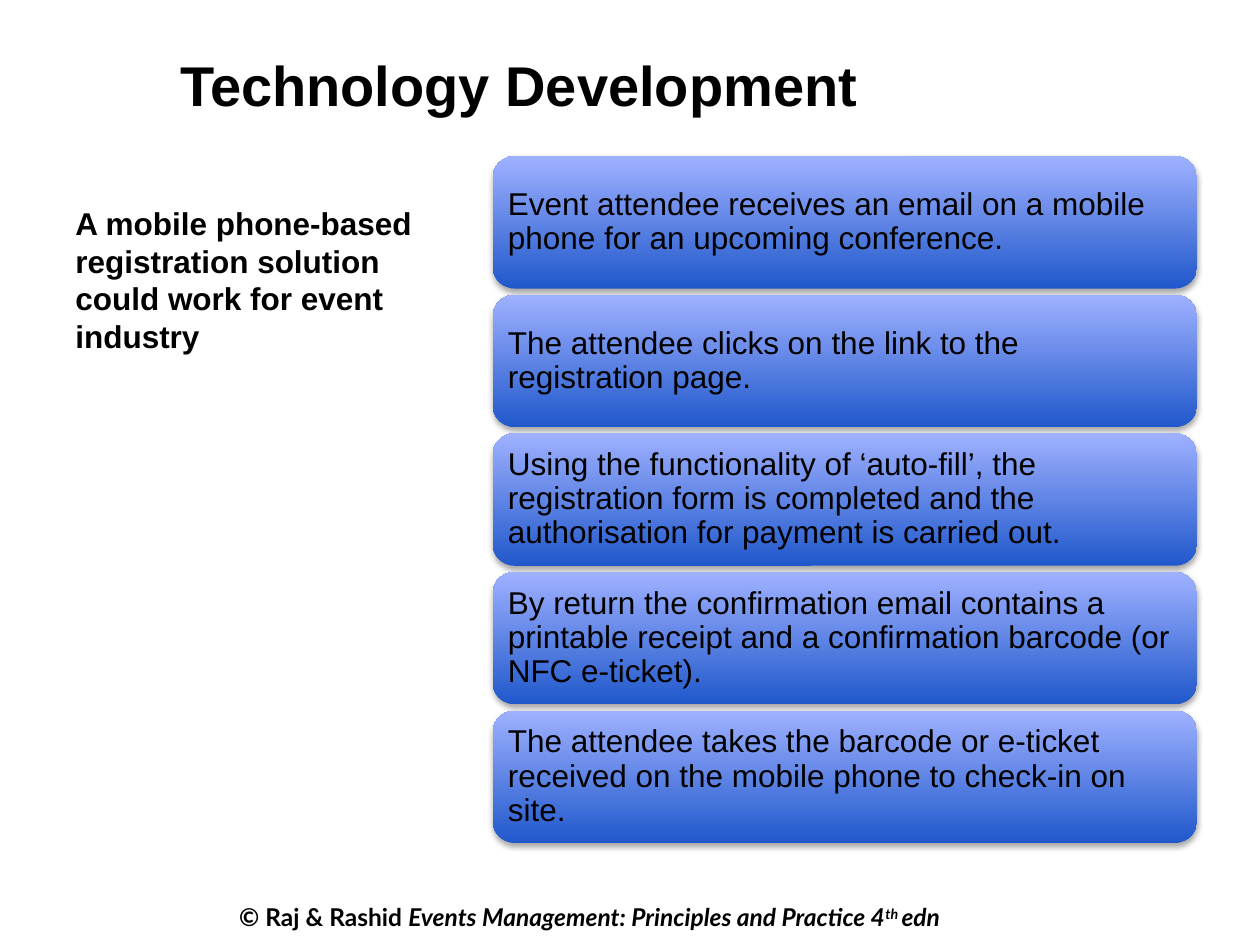
from lxml import etree
from pptx import Presentation
from pptx.dml.color import RGBColor
from pptx.enum import shapes, text
from pptx.oxml.ns import qn
from pptx.util import Pt

TITLE = "Technology Development"
SUMMARY = "A mobile phone-based registration solution could work for event industry"
STEPS = [
    "Event attendee receives an email on a mobile phone for an upcoming conference.",
    "The attendee clicks on the link to the registration page.",
    "Using the functionality of ‘auto-fill’, the registration form is completed "
    "and the authorisation for payment is carried out.",
    "By return the confirmation email contains a printable receipt and a "
    "confirmation barcode (or NFC e-ticket).",
    "The attendee takes the barcode or e-ticket received on the mobile phone "
    "to check-in on site.",
]
CREDIT = [
    ("© Raj & Rashid ", {}),
    ("Events Management: Principles and Practice 4", {"italic": True}),
    ("th ", {"italic": True, "raised": True}),
    ("edn", {"italic": True}),
]


class Theme:
    ink = RGBColor.from_string("000000")
    gradient = ["2058CB", "9FB1FF"]
    shadow = "000000"
    title = {"name": "Arial", "size": Pt(32), "bold": True}
    summary = {"name": "Arial", "size": Pt(18), "bold": True}
    step = {"name": "Arial", "size": Pt(18), "bold": False}
    credit = {"name": "Lato", "size": Pt(14), "bold": True}


STEP_LEFT, STEP_TOP, STEP_WIDTH, STEP_HEIGHT, STEP_GAP = 281.5, 89.3, 402.5, 75.6, 3.6


def apply(target, values):
    for name, value in values.items():
        setattr(target, name, value)


def write(shape, spans, font, frame=None, para=None):
    shape.text_frame.word_wrap = True
    apply(shape.text_frame, frame or {})
    paragraph = shape.text_frame.paragraphs[0]
    apply(paragraph, {"alignment": text.PP_ALIGN.LEFT, **(para or {})})
    for words, extra in spans:
        span = paragraph.add_run()
        span.text = words
        span.font.color.rgb = Theme.ink
        apply(span.font, font)
        span.font.italic = extra.get("italic", False)
        if extra.get("raised"):
            span._r.get_or_add_rPr().set("baseline", "30000")


def add_text(page, area, spans, font, frame=None, para=None):
    box = page.shapes.add_textbox(*map(Pt, area))
    write(box, spans, font, frame, para)


def add_shadow(shape):
    shape.shadow.inherit = False
    effects = shape._element.spPr.find(qn("a:effectLst"))
    outer = etree.SubElement(
        effects, qn("a:outerShdw"), blurRad=str(Pt(3.1)), dist=str(Pt(1.8)),
        dir="5400000", rotWithShape="0")
    colour = etree.SubElement(outer, qn("a:srgbClr"), val=Theme.shadow)
    etree.SubElement(colour, qn("a:alpha"), val="35000")


def add_step(page, index, words):
    top = STEP_TOP + index * (STEP_HEIGHT + STEP_GAP)
    area = map(Pt, (STEP_LEFT, top, STEP_WIDTH, STEP_HEIGHT))
    card = page.shapes.add_shape(shapes.MSO_SHAPE.ROUNDED_RECTANGLE, *area)
    card.fill.gradient()
    card.fill.gradient_angle = 90
    for stop, colour in zip(card.fill.gradient_stops, Theme.gradient):
        stop.color.rgb = RGBColor.from_string(colour)
    card.line.fill.background()
    add_shadow(card)
    margins = {f"margin_{side}": Pt(5) for side in ("left", "top", "right", "bottom")}
    write(card, [(words, {})], Theme.step,
          {"vertical_anchor": text.MSO_ANCHOR.MIDDLE, **margins},
          {"line_spacing": 0.9})


def main():
    deck = Presentation()
    deck.slide_width, deck.slide_height = Pt(720), Pt(540)
    page = deck.slides.add_slide(deck.slide_layouts[6])
    add_text(page, (129.6, 511.9, 501.8, 24.5), CREDIT, Theme.credit)
    add_text(page, (36, 21.6, 521.3, 67), [(TITLE, {})], Theme.title,
             {"margin_top": Pt(7)}, {"alignment": text.PP_ALIGN.CENTER})
    add_text(page, (36, 113, 236.9, 369.4), [(SUMMARY, {})], Theme.summary,
             para={"line_spacing": Pt(21.6)})
    for index, words in enumerate(STEPS):
        add_step(page, index, words)
    deck.save("out.pptx")


if __name__ == "__main__":
    main()
